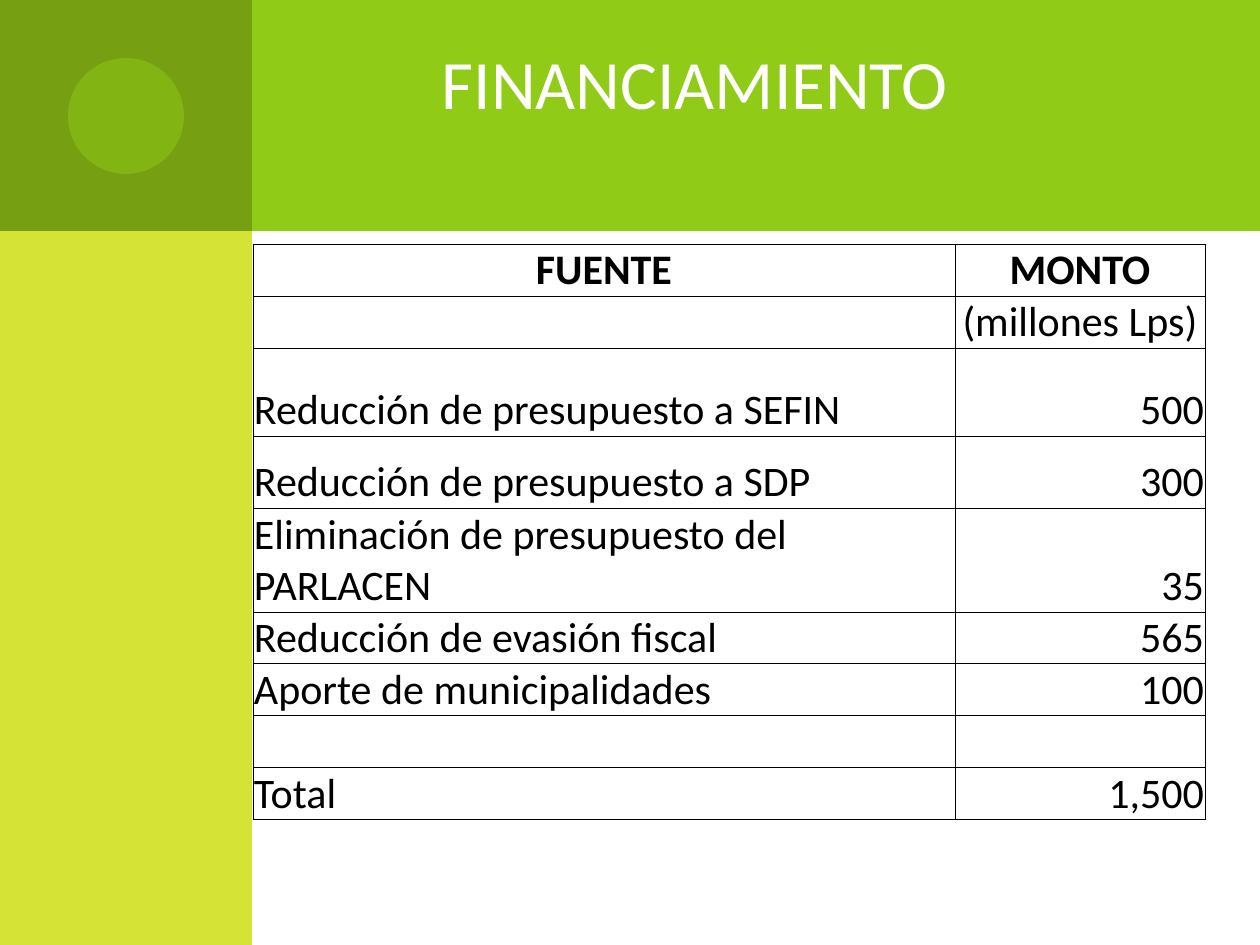
from lxml.etree import SubElement
from pptx import Presentation
from pptx.dml.color import RGBColor
from pptx.enum.shapes import MSO_SHAPE as Shape
from pptx.enum.text import MSO_ANCHOR as Anchor, PP_ALIGN as Align
from pptx.oxml.ns import qn
from pptx.util import Emu, Pt

COLORS = {
    "green": "8FCB17",
    "lime": "D4E336",
    "dark_green": "769F11",
    "white": "FFFFFF",
    "black": "000000",
}
ROWS = [
    ("FUENTE", "MONTO", 52),
    ("", "(millones Lps)", 52),
    ("Reducción de presupuesto a SEFIN", "500", 88),
    ("Reducción de presupuesto a SDP", "300", 72),
    ("Eliminación de presupuesto del PARLACEN", "35", 104),
    ("Reducción de evasión fiscal", "565", 52),
    ("Aporte de municipalidades", "100", 52),
    ("", "", 52),
    ("Total", "1,500", 52),
]
HEADER_ROWS = 2


def px(value):
    return Emu(round(value * 914400 / 126))


class SlideBuilder:
    font = "Calibri"

    def __init__(self, slide):
        self.slide = slide

    def color(self, name):
        return RGBColor.from_string(COLORS[name])

    def block(self, kind, left, top, width, height, color, opacity=100):
        shape = self.slide.shapes.add_shape(kind, px(left), px(top), px(width), px(height))
        shape.shadow.inherit = False
        shape.fill.solid()
        shape.fill.fore_color.rgb = self.color(color)
        shape.line.fill.background()
        if opacity < 100:
            fill = shape._element.spPr.find(qn("a:solidFill"))
            SubElement(fill[0], qn("a:alpha"), val=str(opacity * 1000))

    def add_text(self, paragraph, text, size, color, align, bold=False):
        paragraph.alignment = align
        run = paragraph.add_run()
        run.text = text
        run.font.name = self.font
        run.font.size = Pt(size)
        run.font.bold = bold
        run.font.color.rgb = self.color(color)

    def title(self, text, left, top, width, height):
        frame = self.slide.shapes.add_textbox(px(left), px(top), px(width), px(height)).text_frame
        frame.word_wrap = True
        frame.vertical_anchor = Anchor.MIDDLE
        frame.margin_top = frame.margin_bottom = 0
        self.add_text(frame.paragraphs[0], text, 39.6, "white", Align.CENTER)

    def borders(self, cell):
        properties = cell._tc.get_or_add_tcPr()
        for side in ("lnL", "lnR", "lnT", "lnB"):
            line = SubElement(properties, qn(f"a:{side}"), w=str(Pt(0.5)))
            fill = SubElement(line, qn("a:solidFill"))
            SubElement(fill, qn("a:srgbClr"), val=COLORS["black"])

    def cell(self, cell, text, align, bold):
        self.borders(cell)
        cell.fill.background()
        cell.vertical_anchor = Anchor.BOTTOM
        cell.margin_left = cell.margin_right = cell.margin_top = px(1)
        cell.margin_bottom = 0
        if text:
            self.add_text(cell.text_frame.paragraphs[0], text, 24, "black", align, bold)

    def table(self, rows, left, top, widths):
        height = sum(row[-1] for row in rows)
        table = self.slide.shapes.add_table(
            len(rows), len(widths), px(left), px(top), px(sum(widths)), px(height)
        ).table
        table.first_row = table.horz_banding = False
        for column, width in zip(table.columns, widths):
            column.width = px(width)
        for row_index, (*texts, row_height) in enumerate(rows):
            table.rows[row_index].height = px(row_height)
            aligns = (Align.LEFT, Align.RIGHT)
            if row_index < HEADER_ROWS:
                aligns = (Align.CENTER, Align.CENTER)
            for column_index, (text, align) in enumerate(zip(texts, aligns)):
                self.cell(table.cell(row_index, column_index), text, align, row_index == 0)


def main():
    presentation = Presentation()
    presentation.slide_width = px(1260)
    presentation.slide_height = px(945)
    builder = SlideBuilder(presentation.slides.add_slide(presentation.slide_layouts[6]))
    builder.block(Shape.RECTANGLE, 63, 0, 1197, 231, "green")
    builder.block(Shape.RECTANGLE, 0, 0, 252, 945, "lime")
    builder.block(Shape.RECTANGLE, 0, 0, 252, 231, "dark_green")
    builder.block(Shape.OVAL, 68, 58, 116, 116, "green", opacity=50)
    builder.title("FINANCIAMIENTO", 263, 39, 864, 85)
    builder.table(ROWS, 253, 244, (702, 250))
    presentation.save("out.pptx")


if __name__ == "__main__":
    main()
